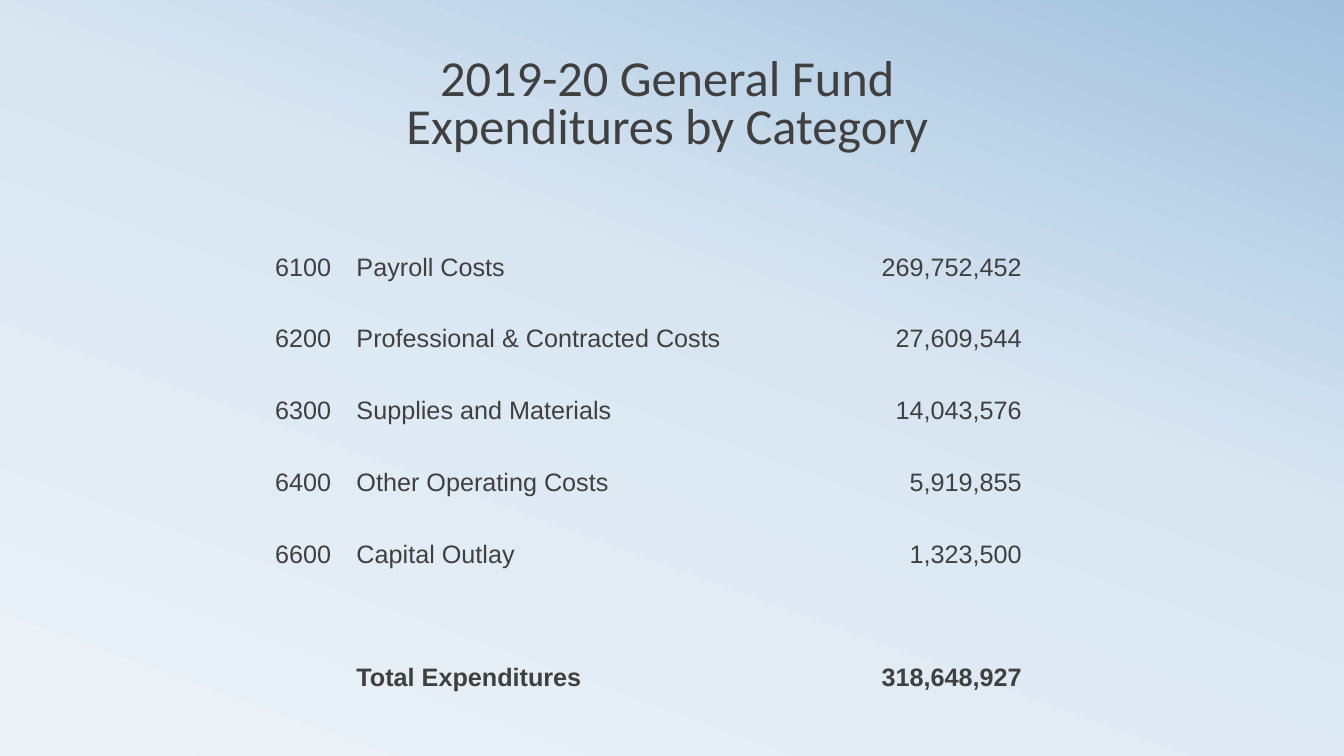
from copy import deepcopy
from dataclasses import dataclass
from typing import NamedTuple

from pptx import Presentation
from pptx.dml.color import RGBColor
from pptx.enum.text import MSO_ANCHOR, PP_ALIGN
from pptx.slide import Slide
from pptx.util import Cm, Pt

LEFT, CENTER, RIGHT = PP_ALIGN.LEFT, PP_ALIGN.CENTER, PP_ALIGN.RIGHT
BOTTOM = MSO_ANCHOR.BOTTOM
PLAIN_STYLE = "{2D5ABB26-0587-4C30-8999-92F81FD0307C}"


@dataclass(frozen=True)
class Theme:
    ink: RGBColor = RGBColor(0x40, 0x40, 0x40)
    sky: tuple = ((0, "ECF3F8"), (0.58, "D9E6F2"), (1, "A1C1DE"))
    angle: int = 70
    head_font: str = "Calibri"
    body_font: str = "Arial"
    head_size: int = 36
    body_size: int = 18


class Column(NamedTuple):
    width: float
    align: PP_ALIGN


class Cost(NamedTuple):
    code: str
    name: str
    amount: str
    height: float = 1.81
    bold: bool = False


THEME = Theme()
COLUMNS = (Column(2.18, CENTER), Column(11.66, LEFT), Column(5.61, RIGHT))
COSTS = (
    Cost("6100", "Payroll Costs", "269,752,452", height=2.57),
    Cost("6200", "Professional & Contracted Costs", "27,609,544"),
    Cost("6300", "Supplies and Materials", "14,043,576"),
    Cost("6400", "Other Operating Costs", "5,919,855"),
    Cost("6600", "Capital Outlay", "1,323,500"),
    Cost("", "Total Expenditures", "318,648,927", height=3.1, bold=True),
)


def paint_sky(slide: Slide) -> None:
    fill = slide.background.fill
    fill.gradient()
    fill.gradient_angle = THEME.angle
    stops = slide.element.xpath(".//a:gsLst")[0]
    stops.append(deepcopy(stops[0]))
    for stop, (place, color) in zip(fill.gradient_stops, THEME.sky):
        stop.position = place
        stop.color.rgb = RGBColor.from_string(color)


def add_title(slide: Slide, text: str) -> None:
    box = slide.shapes.add_textbox(Cm(8.03), Cm(0.64), Cm(17.58), Cm(3.38))
    frame = box.text_frame
    frame.word_wrap = True
    frame.vertical_anchor = BOTTOM
    para = frame.paragraphs[0]
    para.text = text
    para.alignment = CENTER
    para.line_spacing = 0.8
    para.font.name = THEME.head_font
    para.font.size = Pt(THEME.head_size)
    para.font.color.rgb = THEME.ink


def add_costs(slide: Slide) -> None:
    width = sum(col.width for col in COLUMNS)
    height = sum(cost.height for cost in COSTS)
    frame = slide.shapes.add_table(
        len(COSTS), len(COLUMNS), Cm(6.55), Cm(4.65), Cm(width), Cm(height))
    frame.element.xpath(".//a:tableStyleId")[0].text = PLAIN_STYLE
    table = frame.table
    table.first_row = table.horz_banding = False
    for index, col in enumerate(COLUMNS):
        table.columns[index].width = Cm(col.width)
    for row, cost in zip(table.rows, COSTS):
        row.height = Cm(cost.height)
        texts = (cost.code, cost.name, cost.amount)
        for cell, text, col in zip(row.cells, texts, COLUMNS):
            cell.fill.background()
            cell.vertical_anchor = BOTTOM
            para = cell.text_frame.paragraphs[0]
            para.text = text
            para.alignment = col.align
            para.font.name = THEME.body_font
            para.font.size = Pt(THEME.body_size)
            para.font.bold = cost.bold
            para.font.color.rgb = THEME.ink


def main() -> None:
    deck = Presentation()
    deck.slide_width, deck.slide_height = Cm(33.87), Cm(19.05)
    slide = deck.slides.add_slide(deck.slide_layouts[6])
    paint_sky(slide)
    add_title(slide, "2019-20 General Fund Expenditures by Category")
    add_costs(slide)
    deck.save("out.pptx")


if __name__ == "__main__":
    main()
